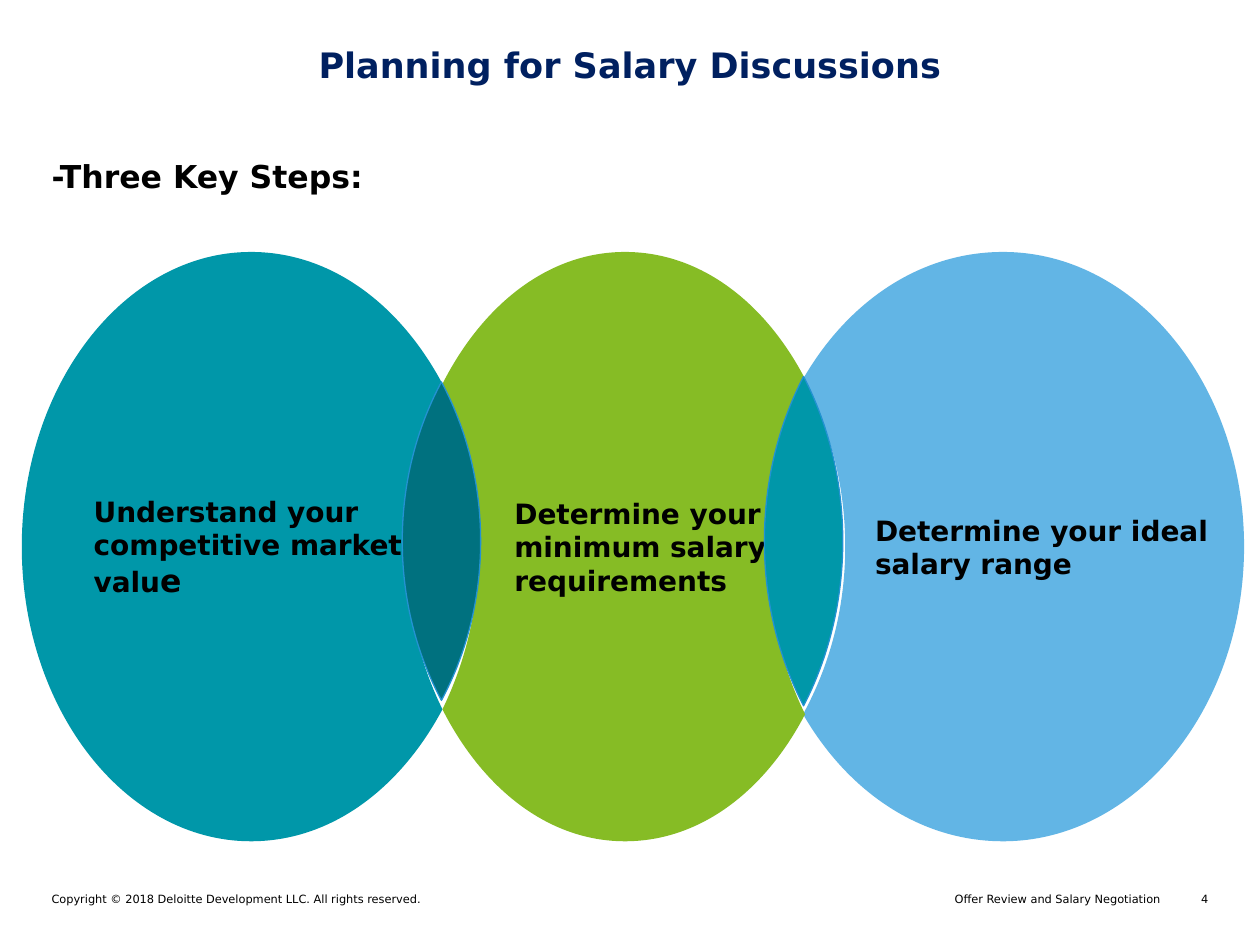
from dataclasses import dataclass

import pptx
import pptx.dml.color
import pptx.enum.text
import pptx.oxml.ns
import pptx.oxml.xmlchemy
import pptx.util

Cm = pptx.util.Cm
Pt = pptx.util.Pt
Align = pptx.enum.text.PP_ALIGN
Anchor = pptx.enum.text.MSO_ANCHOR
Point = tuple[float, float]

FONT = "DejaVu Sans"
COLORS = {
    "navy": "002060",
    "black": "000000",
    "teal": "0097A9",
    "green": "86BC25",
    "sky": "62B5E5",
    "dark_teal": "00717F",
    "outline": "2392D2",
}
MIDDLE_Y = 11.02
LENS_Y = 10.91
OVAL_HALF_HEIGHT = 5.94
LEFT_TIP_X, LEFT_TIP_HEIGHT = 8.92, 3.28
RIGHT_TIP_HEIGHT = 3.38
TEXT_INDENT = 1.2


@dataclass
class Run:
    text: str
    size: float
    bold: bool = False
    color: str = "black"


@dataclass
class Label:
    left: float
    top: float
    width: float
    height: float
    run: Run
    alignment: Align = Align.LEFT


@dataclass
class Step:
    outline: list[Point]
    fill: str
    runs: list[Run]


@dataclass
class Lens:
    tip_x: float
    half_height: float
    fill: str


def rgb(name: str) -> pptx.dml.color.RGBColor:
    return pptx.dml.color.RGBColor.from_string(COLORS[name])


def mirrored(points: list[Point], axis: float = MIDDLE_Y) -> list[Point]:
    return [(x, 2 * axis - y) for x, y in reversed(points)]


def shoulder(tip_x: float, tip_height: float, center_x: float) -> list[Point]:
    run = center_x - tip_x
    rise = OVAL_HALF_HEIGHT - tip_height
    top = MIDDLE_Y - OVAL_HALF_HEIGHT
    return [
        (tip_x, top + rise),
        (tip_x + 0.22 * run, top + 0.4 * rise),
        (tip_x + 0.58 * run, top),
        (center_x, top),
    ]


def cut_oval(
    tip_x: float, tip_height: float, center_x: float, side_x: float, bulge: float
) -> list[Point]:
    upper = shoulder(tip_x, tip_height, center_x) + [
        (center_x + 0.55 * (side_x - center_x), MIDDLE_Y - OVAL_HALF_HEIGHT),
        (side_x, MIDDLE_Y - 0.55 * OVAL_HALF_HEIGHT),
        (side_x, MIDDLE_Y),
    ]
    inner = bulging_edge(tip_x, bulge, tip_height)
    return upper + mirrored(upper)[1:] + inner[::-1][1:]


def bulging_edge(
    tip_x: float, bulge: float, half_height: float, axis: float = MIDDLE_Y
) -> list[Point]:
    upper = [
        (tip_x, axis - half_height),
        (tip_x + 0.63 * bulge, axis - 0.71 * half_height),
        (tip_x + bulge, axis - 0.37 * half_height),
        (tip_x + bulge, axis),
    ]
    return upper + mirrored(upper, axis)[1:]


def middle_oval(center_x: float, right_tip_x: float) -> list[Point]:
    right = shoulder(right_tip_x, RIGHT_TIP_HEIGHT, center_x)
    left = shoulder(LEFT_TIP_X, LEFT_TIP_HEIGHT, center_x)
    top = right + left[::-1][1:]
    left_edge = bulging_edge(LEFT_TIP_X, 0.74, LEFT_TIP_HEIGHT)
    right_edge = bulging_edge(right_tip_x, -0.76, RIGHT_TIP_HEIGHT)
    return top + left_edge[1:] + mirrored(top)[1:] + right_edge[::-1][1:]


def add_run(paragraph, run: Run) -> None:
    text_run = paragraph.add_run()
    text_run.text = run.text
    text_run.font.name = FONT
    text_run.font.size = Pt(run.size)
    text_run.font.bold = run.bold
    text_run.font.color.rgb = rgb(run.color)


def fill_label(shape, label: Label) -> None:
    shape.left, shape.top = Cm(label.left), Cm(label.top)
    shape.width, shape.height = Cm(label.width), Cm(label.height)
    frame = shape.text_frame
    frame.word_wrap = True
    frame.auto_size = pptx.enum.text.MSO_AUTO_SIZE.NONE
    frame.vertical_anchor = Anchor.TOP
    frame.margin_left = frame.margin_top = frame.margin_right = frame.margin_bottom = 0
    paragraph = frame.paragraphs[0]
    paragraph.alignment = label.alignment
    add_run(paragraph, label.run)


def add_curved_outline(slide, points: list[Point], fill: str):
    corners = [(Cm(x), Cm(y)) for x, y in points]
    builder = slide.shapes.build_freeform(*corners[0])
    builder.add_line_segments(corners[3::3], close=True)
    shape = builder.convert_to_shape()
    qn = pptx.oxml.ns.qn
    for index, line in enumerate(list(shape._element.iter(qn("a:lnTo")))):
        line.tag = qn("a:cubicBezTo")
        for position, (x, y) in enumerate(corners[3 * index + 1:3 * index + 3]):
            control = line.makeelement(qn("a:pt"), {})
            control.set("x", str(x - shape.left))
            control.set("y", str(y - shape.top))
            line.insert(position, control)
    shape.shadow.inherit = False
    shape.fill.solid()
    shape.fill.fore_color.rgb = rgb(fill)
    shape.line.fill.background()
    return shape


def add_step(slide, step: Step) -> None:
    frame = add_curved_outline(slide, step.outline, step.fill).text_frame
    frame.word_wrap = True
    frame.vertical_anchor = Anchor.MIDDLE
    frame.margin_left = frame.margin_top = Cm(0.25)
    frame.margin_right = frame.margin_bottom = Cm(0.25)
    paragraph = frame.paragraphs[0]
    paragraph.alignment = Align.LEFT
    paragraph._p.get_or_add_pPr().set("marL", str(Cm(TEXT_INDENT)))
    for run in step.runs:
        add_run(paragraph, run)


def add_lens(slide, lens: Lens) -> None:
    left = bulging_edge(lens.tip_x, -0.79, lens.half_height, LENS_Y)
    right = bulging_edge(lens.tip_x, 0.79, lens.half_height, LENS_Y)
    shape = add_curved_outline(slide, left + right[::-1][1:], lens.fill)
    shape.line.color.rgb = rgb("outline")
    shape.line.width = Pt(0.75)


def main() -> None:
    presentation = pptx.Presentation()
    presentation.slide_width, presentation.slide_height = Cm(25.4), Cm(19.05)
    slide = presentation.slides.add_slide(presentation.slide_layouts[5])

    title = Run("Planning for Salary Discussions", 20, True, "navy")
    fill_label(slide.shapes.title, Label(1.04, 0.88, 23.32, 1, title, Align.CENTER))
    copyright_line = "Copyright © 2018 Deloitte Development LLC. All rights reserved."
    for label in (
        Label(1.04, 3.16, 23.32, 0.94, Run("-Three Key Steps:", 18, True)),
        Label(1.04, 17.98, 11.15, 0.56, Run(copyright_line, 6.5)),
        Label(13.2, 17.98, 10.2, 0.56,
              Run("Offer Review and Salary Negotiation", 6.5), Align.RIGHT),
        Label(23.72, 17.98, 0.64, 0.28, Run("4", 6.5), Align.RIGHT),
    ):
        fill_label(slide.shapes.add_textbox(0, 0, 0, 0), label)

    for step in (
        Step(cut_oval(LEFT_TIP_X, LEFT_TIP_HEIGHT, 5.06, 0.44, -0.74), "teal",
             [Run("Understand your competitive market valu", 16, True),
              Run("e", 18, True)]),
        Step(cut_oval(16.19, RIGHT_TIP_HEIGHT, 20.22, 25.08, 0.85), "sky",
             [Run("Determine your ideal salary range", 16, True)]),
        Step(middle_oval(12.6, 16.23), "green",
             [Run("Determine your minimum salary requirements", 16, True)]),
    ):
        add_step(slide, step)
    for lens in (Lens(8.9, 3.21, "dark_teal"), Lens(16.2, 3.32, "teal")):
        add_lens(slide, lens)

    presentation.save("out.pptx")


if __name__ == "__main__":
    main()
